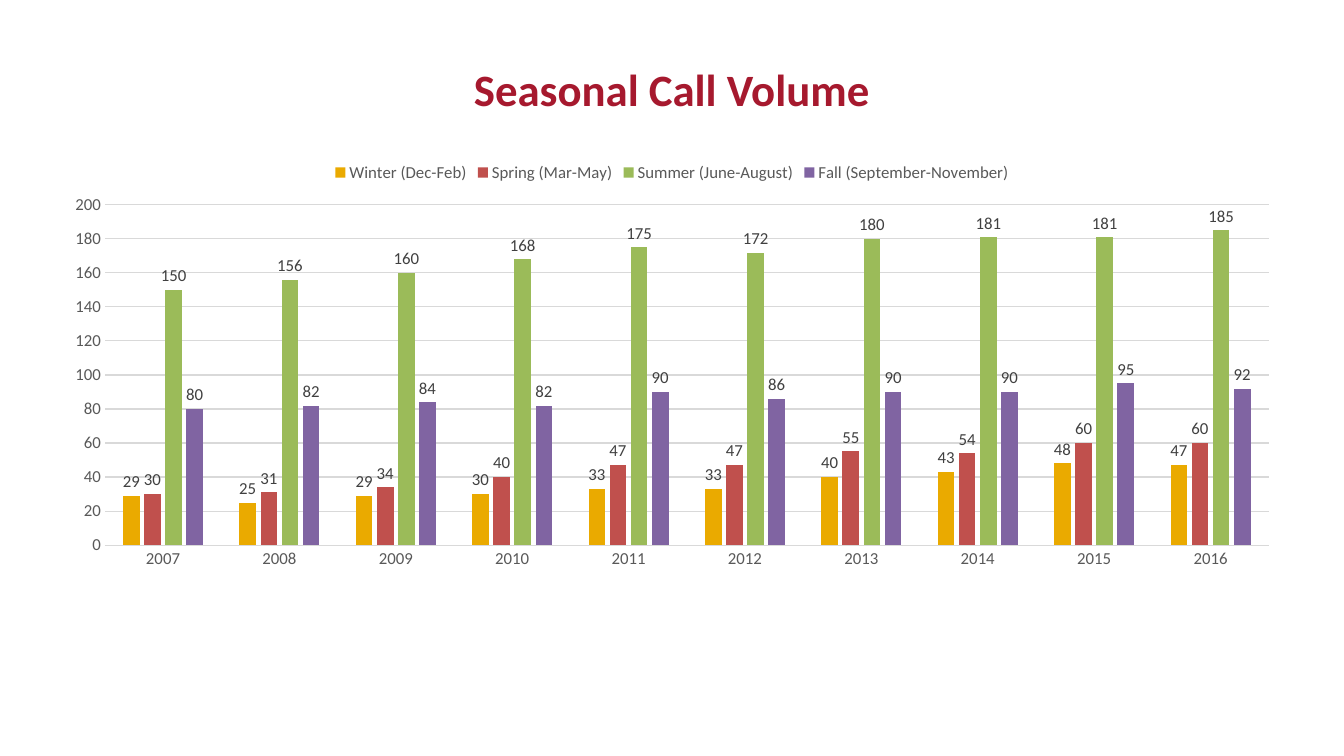
import dataclasses

import pptx
import pptx.chart.data
import pptx.dml.color
import pptx.enum.chart
import pptx.enum.text
import pptx.util


@dataclasses.dataclass(frozen=True)
class Theme:
    font: str = "Calibri"
    title_size: int = 32
    chart_size: int = 12
    line_width: float = 0.75
    title: str = "A6192E"
    axis_text: str = "595959"
    label_text: str = "404040"
    rule: str = "D9D9D9"
    seasons: tuple = ("EAAA00", "C0504D", "9BBB59", "8064A2")


YEARS = [str(year) for year in range(2007, 2017)]
CALLS = {
    "Winter (Dec-Feb)": (29, 25, 29, 30, 33, 33, 40, 43, 48, 47),
    "Spring (Mar-May)": (30, 31, 34, 40, 47, 47, 55, 54, 60, 60),
    "Summer (June-August)": (150, 156, 160, 168, 175, 172, 180, 181, 181, 185),
    "Fall (September-November)": (80, 82, 84, 82, 90, 86, 90, 90, 95, 92),
}


class SlideBuilder:
    COLUMNS = 80
    ROWS = 30

    def __init__(self, deck, theme):
        self.deck = deck
        self.theme = theme
        self.page = deck.slides.add_slide(deck.slide_layouts[5])

    def place(self, column, row, columns, rows):
        column_width = self.deck.slide_width / self.COLUMNS
        row_height = self.deck.slide_height / self.ROWS
        return (
            round(column * column_width),
            round(row * row_height),
            round(columns * column_width),
            round(rows * row_height),
        )

    def style_font(self, font, size, color, bold=False):
        font.name = self.theme.font
        font.size = pptx.util.Pt(size)
        font.bold = bold
        font.color.rgb = pptx.dml.color.RGBColor.from_string(color)

    def style_rule(self, line):
        line.color.rgb = pptx.dml.color.RGBColor.from_string(self.theme.rule)
        line.width = pptx.util.Pt(self.theme.line_width)

    def title(self, text, *cells):
        box = self.page.shapes.title
        box.left, box.top, box.width, box.height = self.place(*cells)
        box.text_frame.text = text
        box.text_frame.vertical_anchor = pptx.enum.text.MSO_ANCHOR.MIDDLE
        para = box.text_frame.paragraphs[0]
        para.alignment = pptx.enum.text.PP_ALIGN.CENTER
        self.style_font(para.font, self.theme.title_size, self.theme.title, bold=True)

    def column_chart(self, categories, series, *cells):
        data = pptx.chart.data.CategoryChartData()
        data.categories = categories
        for name, values in series.items():
            data.add_series(name, values)
        chart = self.page.shapes.add_chart(
            pptx.enum.chart.XL_CHART_TYPE.COLUMN_CLUSTERED, *self.place(*cells), data
        ).chart
        self.style_font(chart.font, self.theme.chart_size, self.theme.axis_text)
        chart.has_title = False
        self.legend(chart)
        self.axes(chart)
        self.columns(chart.plots[0])

    def legend(self, chart):
        chart.has_legend = True
        chart.legend.position = pptx.enum.chart.XL_LEGEND_POSITION.TOP
        chart.legend.include_in_layout = False
        self.style_font(chart.legend.font, self.theme.chart_size, self.theme.axis_text)

    def axes(self, chart):
        for axis in (chart.category_axis, chart.value_axis):
            axis.major_tick_mark = pptx.enum.chart.XL_TICK_MARK.NONE
            axis.minor_tick_mark = pptx.enum.chart.XL_TICK_MARK.NONE
            self.style_font(axis.tick_labels.font, self.theme.chart_size, self.theme.axis_text)
        self.style_rule(chart.category_axis.format.line)
        scale = chart.value_axis
        scale.minimum_scale, scale.maximum_scale, scale.major_unit = 0, 200, 20
        scale.format.line.fill.background()
        scale.has_major_gridlines = True
        self.style_rule(scale.major_gridlines.format.line)

    def columns(self, plot):
        plot.gap_width = 219
        plot.overlap = -27
        plot.vary_by_categories = False
        for season, color in zip(plot.series, self.theme.seasons):
            season.format.fill.solid()
            season.format.fill.fore_color.rgb = pptx.dml.color.RGBColor.from_string(color)
            season.invert_if_negative = False
            labels = season.data_labels
            labels.show_value = True
            labels.position = pptx.enum.chart.XL_LABEL_POSITION.OUTSIDE_END
            self.style_font(labels.font, self.theme.chart_size, self.theme.label_text)


def main():
    deck = pptx.Presentation()
    deck.slide_width = pptx.util.Inches(13.33)
    deck.slide_height = pptx.util.Inches(7.5)
    builder = SlideBuilder(deck, Theme())
    builder.title("Seasonal Call Volume", 4, 1, 72, 5)
    builder.column_chart(YEARS, CALLS, 3, 6, 74, 16.92)
    deck.save("out.pptx")


if __name__ == "__main__":
    main()
